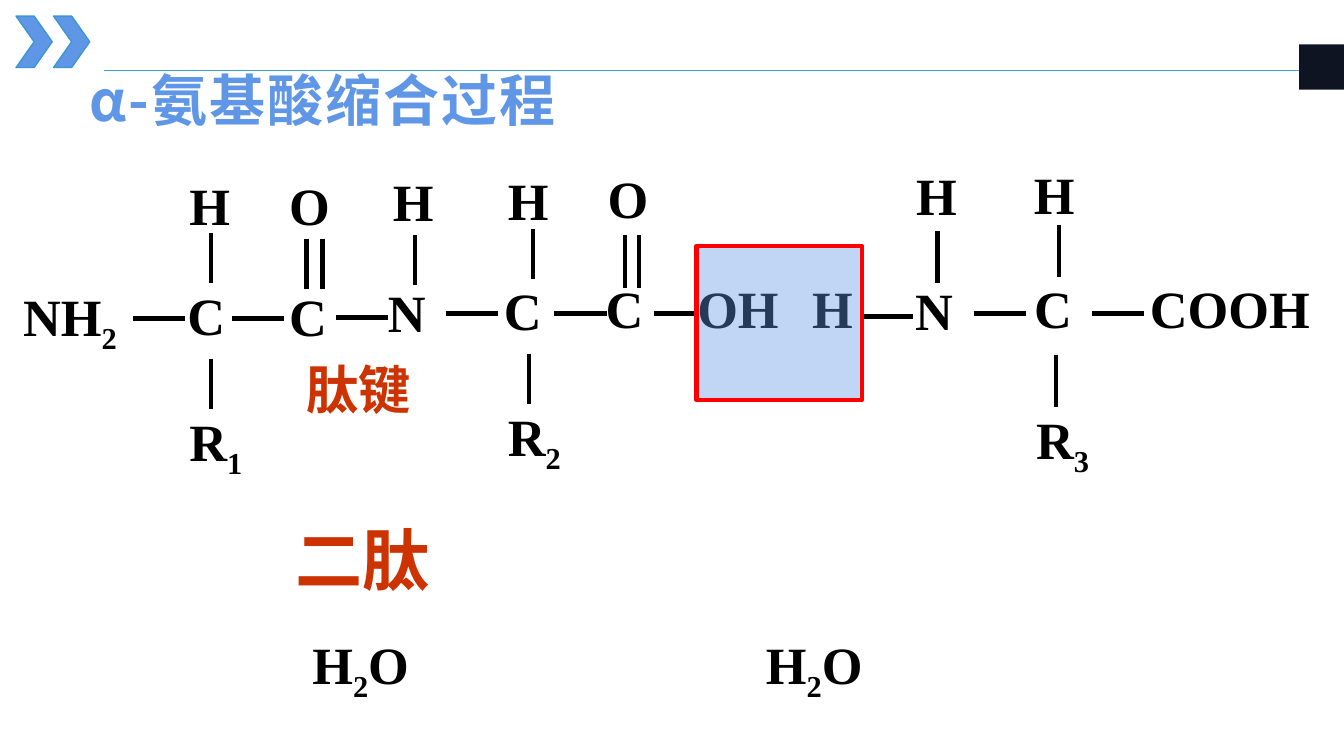
from itertools import groupby

from pptx import Presentation
from pptx import util as u
from pptx.dml import color
from pptx.enum import shapes, text
from pptx.oxml import xmlchemy
from pptx.oxml.ns import qn
from lxml import etree

COLORS = {
    "accent": "6096E6", "chevron_edge": "3B96D3", "rule": "3DA1D2",
    "tab": "0F1423", "label": "CC3300", "atom": "000000", "frame": "FF0000",
}
SERIF, SANS = "Times New Roman", "Noto Sans CJK SC"
ATOM_FORMAT = {"size": u.Pt(37.4), "bold": True, "name": SERIF}
LABEL_FORMAT = {"size": u.Pt(37.4), "bold": True, "name": SERIF}
HEADLINE_FORMAT = {"size": u.Pt(48), "bold": True, "name": SERIF}
TITLE_FORMAT = {"size": u.Pt(40), "bold": True, "name": SANS}
ATOM_HEIGHT = 52.6
ATOM_WIDTHS = {
    "C": 51.8, "O": 52, "H": 59.8, "N": 59.8, "OH": 105.8, "NH2": 111.6,
    "COOH": 149.8, "R1": 81.4, "R2": 104.4, "R3": 104.4, "H2O": 113,
}

DIPEPTIDE_ATOMS = [
    ("NH2", 0, 84.2), ("C", 117.4, 83.5), ("H", 118.8, 5), ("R1", 118.8, 173.5),
    ("C", 190.1, 84.2), ("O", 190.1, 5), ("N", 260.6, 81.4), ("H", 264.2, 2.2),
    ("C", 343.4, 79.9), ("H", 346.3, 1.4), ("R2", 346.3, 169.9),
    ("C", 416.2, 78.5), ("O", 417.6, 0),
]
DIPEPTIDE_ACROSS = [
    (85.7, 112.3, 37.4), (156.2, 112.3, 37.4), (230.4, 111.6, 37.4),
    (308.9, 108.7, 37.4), (386.6, 108.7, 37.4), (457.9, 108.7, 30.2),
]
DIPEPTIDE_DOWN = [
    (141.1, 51.1, 36), (141.1, 141.1, 36), (209.5, 55.4, 36), (221, 55.4, 36),
    (287.3, 52.6, 36), (371.5, 48.2, 36), (368.6, 137.5, 36),
    (437, 52.6, 38.2), (447.1, 52.6, 38.2),
]
AMINO_ACID_ATOMS = [
    ("N", 31, 82.8), ("H", 31.7, 0.7), ("C", 115.9, 81.4), ("H", 115.9, 0),
    ("R3", 117.4, 175), ("COOH", 198.7, 81.4),
]
AMINO_ACID_ACROSS = [(0, 113.8, 36.7), (79.9, 111.6, 37.4), (164.2, 111.6, 37.4)]
AMINO_ACID_DOWN = [(54, 52.6, 37.4), (141.1, 48.2, 37.4), (138.6, 141.1, 37.4)]


def rgb(name):
    return color.RGBColor.from_string(COLORS[name])


def add_text(parent, content, box, formats, color_name):
    shape = parent.shapes.add_textbox(*map(u.Pt, box))
    frame = shape.text_frame
    frame.word_wrap = True
    frame.auto_size = text.MSO_AUTO_SIZE.SHAPE_TO_FIT_TEXT
    paragraph = frame.paragraphs[0]
    for is_subscript, letters in groupby(content, str.isdigit):
        run = paragraph.add_run()
        run.text = "".join(letters)
        for attribute, value in formats.items():
            setattr(run.font, attribute, value)
        run.font.color.rgb = rgb(color_name)
        if is_subscript:
            run.font._element.set("baseline", "-25000")
    return paragraph


def add_atom(parent, symbol, left, top):
    box = (left, top, ATOM_WIDTHS[symbol], ATOM_HEIGHT)
    add_text(parent, symbol, box, ATOM_FORMAT, "atom")


def add_line(parent, left, top, across, down, color_name, width):
    ends = map(u.Pt, (left, top, left + across, top + down))
    line = parent.shapes.add_connector(shapes.MSO_CONNECTOR.STRAIGHT, *ends)
    line.line.color.rgb = rgb(color_name)
    line.line.width = u.Pt(width)
    etree.SubElement(line._element.spPr, qn("a:effectLst"))


def add_block(parent, kind, box, fill, edge=None, width=1):
    shape = parent.shapes.add_shape(kind, *map(u.Pt, box))
    shape.shadow.inherit = False
    shape.fill.solid()
    shape.fill.fore_color.rgb = rgb(fill)
    if edge:
        shape.line.color.rgb = rgb(edge)
        shape.line.width = u.Pt(width)
    else:
        shape.line.fill.background()
    return shape


def draw_header(slide, left, top, width):
    for index in range(2):
        box = (left + index * 26.8, top, 25.8, 36.7)
        add_block(slide, shapes.MSO_SHAPE.CHEVRON, box, "accent", "chevron_edge")
    rule_left = left + 62.7
    add_line(slide, rule_left, top + 38.9, width - rule_left, 0, "rule", 0.5)
    tab = (width - 32, top + 20.2, 32.4, 32.4)
    add_block(slide, shapes.MSO_SHAPE.RECTANGLE, tab, "tab")


def draw_title(slide, box):
    paragraph = add_text(slide, "α-氨基酸缩合过程", box, TITLE_FORMAT, "accent")
    properties = paragraph.runs[0].font._element
    properties.set("spc", "150")
    etree.SubElement(properties, qn("a:ea")).set("typeface", SANS)


def draw_molecule(slide, left, top, atoms, across, down):
    group = slide.shapes.add_group_shape()
    for symbol, x, y in atoms:
        add_atom(group, symbol, left + x, top + y)
    for x, y, length in across:
        add_line(group, left + x, top + y, length, 0, "atom", 3)
    for x, y, length in down:
        add_line(group, left + x, top + y, 0, length, "atom", 3)


def draw_leaving_water(slide, left, top, width, height):
    add_atom(slide, "OH", left - 6.5, top + 18)
    add_atom(slide, "H", left + 75.6, top + 18)
    frame = add_block(slide, shapes.MSO_SHAPE.RECTANGLE, (left, top, width, height),
                      "accent", "frame", 3)
    fill_color = frame._element.spPr.find(qn("a:solidFill"))[0]
    etree.SubElement(fill_color, qn("a:alpha")).set("val", "39000")


def draw_labels(slide, left, top):
    add_text(slide, "肽键", (left + 8, top, 113, ATOM_HEIGHT), LABEL_FORMAT, "label")
    add_text(slide, "二肽", (left, top + 115.2, 144, 65.5), HEADLINE_FORMAT, "label")
    for offset in (12.2, 336.2):
        add_atom(slide, "H2O", left + offset, top + 196.6)


def main():
    presentation = Presentation()
    presentation.slide_width = u.Pt(960)
    presentation.slide_height = u.Pt(540)
    slide = presentation.slides.add_slide(presentation.slide_layouts[6])
    draw_header(slide, 11.5, 11.5, 960)
    draw_molecule(slide, 615.6, 112.3, AMINO_ACID_ATOMS, AMINO_ACID_ACROSS, AMINO_ACID_DOWN)
    draw_molecule(slide, 9.4, 115.2, DIPEPTIDE_ATOMS, DIPEPTIDE_ACROSS, DIPEPTIDE_DOWN)
    draw_leaving_water(slide, 497.5, 175.7, 118.1, 110.2)
    draw_labels(slide, 203.8, 251.3)
    draw_title(slide, (56.9, 43.2, 403.2, 55.4))
    presentation.save("out.pptx")


if __name__ == "__main__":
    main()
